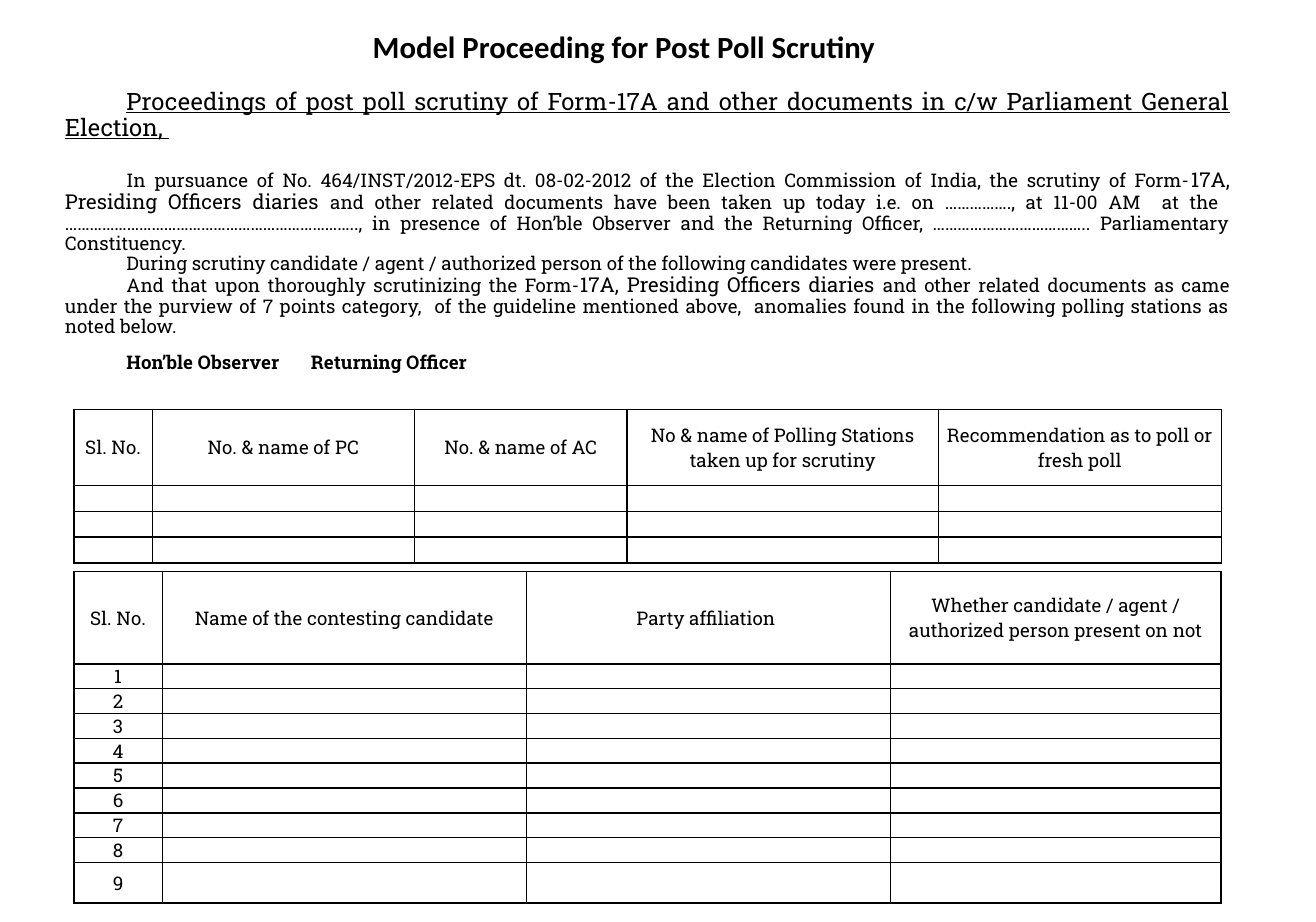
from dataclasses import dataclass

from lxml import etree
from pptx import Presentation
from pptx.dml.color import RGBColor
from pptx.enum.text import MSO_ANCHOR, MSO_AUTO_SIZE, PP_ALIGN
from pptx.oxml.ns import qn
from pptx.util import Inches, Pt

COLORS = {"ink": "000000", "paper": "FFFFFF"}
BODY_FONT = "Roboto Slab"
TITLE_FONT = "Calibri"


@dataclass
class Form:
    """A ruled table: header texts, column widths and row heights in inches."""
    top: float
    widths: list[float]
    heights: list[float]
    headers: list[str]
    numbered: bool = False


@dataclass
class Passage:
    """A paragraph whose every second phrase is set slightly larger."""
    phrases: list[str]
    size: float = 11
    before: float = 0
    bold: bool = False
    underline: bool = False
    tab: float = 0


FORMS = [
    Form(4.65, [0.72, 2.96, 2.96, 2.69], [0.75] + [0.2] * 8 + [0.33],
         ["Sl. No.", "Name of the contesting candidate", "Party affiliation ",
          "Whether candidate / agent / authorized person present on not"],
         numbered=True),
    Form(3.33, [0.64, 2.13, 1.73, 2.53, 2.3], [0.62] + [0.21] * 3,
         ["Sl. No.", "No. & name of PC", "No. & name of AC",
          "No & name of Polling Stations taken up for scrutiny",
          "Recommendation as to poll or fresh poll"]),
]

DIARIES = "17A, Presiding Officers diaries "
PASSAGES = [
    Passage(["Proceedings of post poll scrutiny of Form-17A and other documents "
             "in c/w Parliament General Election, "], size=14, underline=True),
    Passage(["In pursuance of No. 464/INST/2012-EPS dt. 08-02-2012 of the Election "
             "Commission of India, the scrutiny of Form-",
             DIARIES,
             "and other related documents have been taken up today i.e. on ……………., "
             "at 11-00 AM  at the  …………………………………………………………….., in presence of "
             "Hon’ble Observer and the Returning Officer, ……………………………….. "
             "Parliamentary Constituency. "], before=16.6),
    Passage(["During scrutiny candidate / agent / authorized person of the "
             "following candidates were present."]),
    Passage(["And that upon thoroughly scrutinizing the Form-",
             DIARIES,
             "and other related documents as came under the purview of 7 points "
             "category,  of the guideline mentioned above,  anomalies found in the "
             "following polling stations as noted below. "]),
    Passage(["Hon’ble Observer\tReturning Officer"], before=9.5, bold=True, tab=7.23),
]


def set_font(font, name: str, size: float, bold: bool = False) -> None:
    font.name = name
    font.size = Pt(size)
    font.bold = bold
    font.color.rgb = RGBColor.from_string(COLORS["ink"])


def rule_cell(cell) -> None:
    """Draw a one-point line on all four sides of a cell."""
    properties = cell._tc.get_or_add_tcPr()
    for position, side in enumerate(("lnL", "lnR", "lnT", "lnB")):
        line = etree.Element(qn(f"a:{side}"), w=str(Pt(1)))
        fill = etree.SubElement(line, qn("a:solidFill"))
        etree.SubElement(fill, qn("a:srgbClr"), val=COLORS["ink"])
        properties.insert(position, line)


def fill_cell(cell, text: str) -> None:
    cell.fill.solid()
    cell.fill.fore_color.rgb = RGBColor.from_string(COLORS["paper"])
    cell.vertical_anchor = MSO_ANCHOR.MIDDLE
    cell.margin_left = cell.margin_right = Inches(0.07)
    cell.margin_top = cell.margin_bottom = 0
    cell.text = text
    paragraph = cell.text_frame.paragraphs[0]
    paragraph.alignment = PP_ALIGN.CENTER
    set_font(paragraph.font, BODY_FONT, 11)
    if not text:  # keeps empty rows from growing
        etree.SubElement(paragraph._p, qn("a:endParaRPr"), sz="800")
    rule_cell(cell)


def draw_form(slide, form: Form) -> None:
    table = slide.shapes.add_table(
        len(form.heights), len(form.widths), Inches(0.6), Inches(form.top),
        Inches(sum(form.widths)), Inches(sum(form.heights))).table
    table.first_row = table.horz_banding = False
    for column, width in zip(table.columns, form.widths):
        column.width = Inches(width)
    for number, height in enumerate(form.heights):
        table.rows[number].height = Inches(height)
        for column, header in enumerate(form.headers):
            label = str(number) if form.numbered and column == 0 else ""
            fill_cell(table.cell(number, column), label if number else header)


def write_passage(paragraph, passage: Passage) -> None:
    paragraph.alignment = PP_ALIGN.JUSTIFY
    paragraph.line_spacing = 0.9
    paragraph.space_before = Pt(passage.before)
    properties = paragraph._p.get_or_add_pPr()
    properties.set("marL", "0")
    properties.set("indent", str(Inches(0.5)))
    if passage.tab:
        tabs = etree.SubElement(properties, qn("a:tabLst"))
        etree.SubElement(tabs, qn("a:tab"), pos=str(Inches(passage.tab)), algn="l")
    set_font(paragraph.font, BODY_FONT, passage.size, passage.bold)
    paragraph.font.underline = passage.underline
    for position, phrase in enumerate(passage.phrases):
        run = paragraph.add_run()
        run.text = phrase
        if position % 2:
            run.font.size = Pt(passage.size + 1)


def write_title(slide) -> None:
    title = slide.shapes.title
    title.left, title.top = Inches(2.93), Inches(0.18)
    title.width, title.height = Inches(4.58), Inches(0.4)
    frame = title.text_frame
    frame.text = "Model Proceeding for Post Poll Scrutiny"
    frame.auto_size = MSO_AUTO_SIZE.NONE
    frame.vertical_anchor = MSO_ANCHOR.MIDDLE
    heading = frame.paragraphs[0]
    heading.alignment = PP_ALIGN.LEFT
    set_font(heading.font, TITLE_FONT, 18, bold=True)


def write_proceedings(slide) -> None:
    frame = slide.shapes.add_textbox(
        Inches(0.43), Inches(0.68), Inches(9.67), Inches(2.6)).text_frame
    frame.word_wrap = True
    for position, passage in enumerate(PASSAGES):
        paragraph = frame.add_paragraph() if position else frame.paragraphs[0]
        write_passage(paragraph, passage)


def main() -> None:
    presentation = Presentation()
    presentation.slide_width = Inches(10.7)
    presentation.slide_height = Inches(7.5)
    slide = presentation.slides.add_slide(presentation.slide_layouts[5])

    # Tables for polling stations and candidates
    for form in FORMS:
        draw_form(slide, form)

    # Heading and proceedings text
    write_proceedings(slide)
    write_title(slide)

    presentation.save("out.pptx")


if __name__ == "__main__":
    main()
